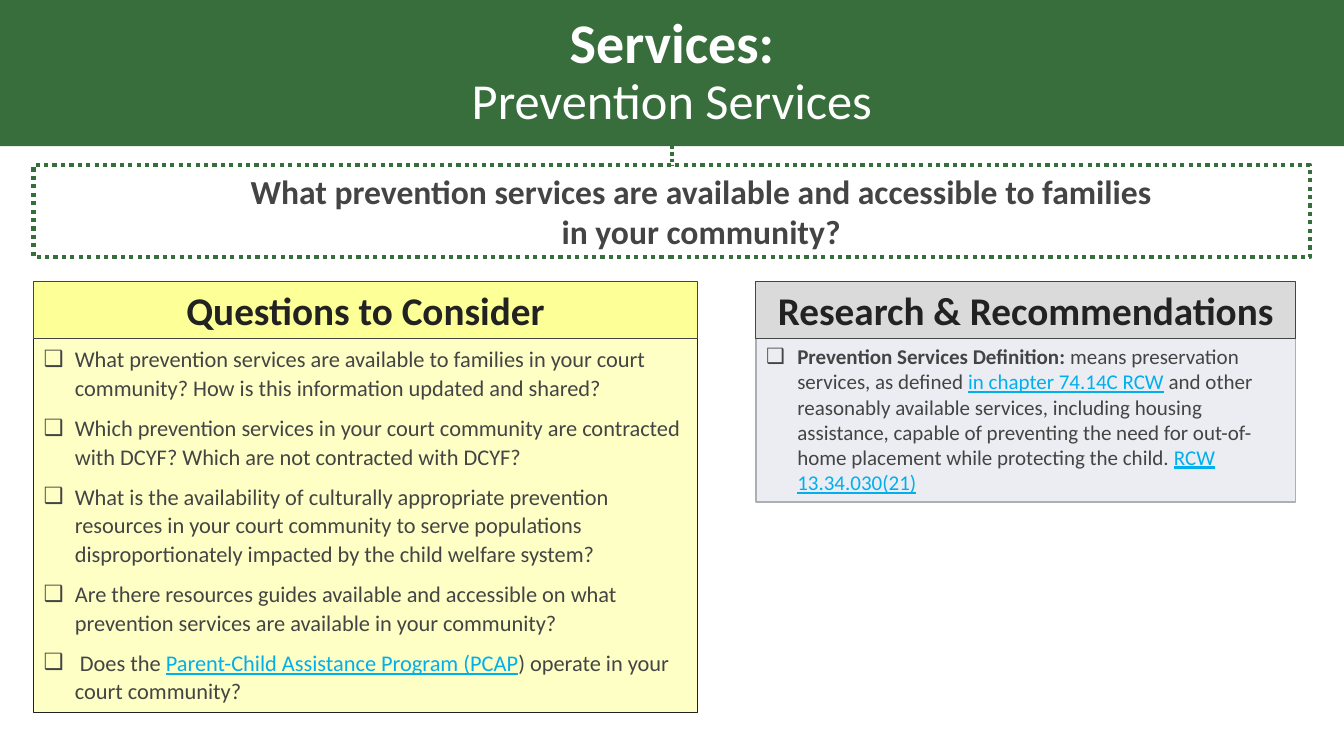
from pptx import Presentation
from pptx.dml.color import RGBColor
from pptx.enum.dml import MSO_LINE
from pptx.enum.shapes import MSO_CONNECTOR, MSO_SHAPE
from pptx.enum.text import MSO_ANCHOR, MSO_AUTO_SIZE, PP_ALIGN
from pptx.oxml.ns import qn
from pptx.util import Inches, Pt

RECT = MSO_SHAPE.RECTANGLE
LINE = MSO_CONNECTOR.STRAIGHT
DOTS = MSO_LINE.ROUND_DOT
TOP, MIDDLE = MSO_ANCHOR.TOP, MSO_ANCHOR.MIDDLE
LEFT, CENTER = PP_ALIGN.LEFT, PP_ALIGN.CENTER
FIXED = MSO_AUTO_SIZE.NONE

GREEN = RGBColor(0x38, 0x6D, 0x3C)
WHITE = RGBColor(0xFF, 0xFF, 0xFF)
INK = RGBColor(0x44, 0x44, 0x44)
BLACK = RGBColor(0x22, 0x22, 0x22)
LINK = RGBColor(0x00, 0xAF, 0xEC)
YELLOW = RGBColor(0xFD, 0xFF, 0x97)
CREAM = RGBColor(0xFE, 0xFF, 0xC5)
GRAY = RGBColor(0xDA, 0xDA, 0xDA)
MIST = RGBColor(0xEB, 0xED, 0xF3)
STEEL = RGBColor(0xAE, 0xAF, 0xB4)

FONT = "Calibri"
WIDTH, HEIGHT = Inches(13.33), Inches(7.5)
COLS = 40
UNIT = WIDTH / COLS  # square grid cell
HEAD_ROWS = 1.71
INDENT = Inches(0.31)

PLAIN, BOLD, URL = "plain", "bold", "url"
QUESTIONS = [
    [("What prevention services are available to families in your court "
      "community? How is this information updated and shared?", PLAIN)],
    [("Which prevention services in your court community are contracted with "
      "DCYF? Which are not contracted with DCYF?", PLAIN)],
    [("What is the availability of culturally appropriate prevention resources "
      "in your court community to serve populations disproportionately "
      "impacted by the child welfare system?", PLAIN)],
    [("Are there resources guides available and accessible on what prevention "
      "services are available in your community?", PLAIN)],
    [(" Does the ", PLAIN),
     ("Parent-Child Assistance Program (PCAP", URL),
     (") operate in your court community?", PLAIN)],
]
RESEARCH = [
    [("Prevention Services Definition: ", BOLD),
     ("means preservation services, as defined ", PLAIN),
     ("in chapter 74.14C RCW", URL),
     (" and other reasonably available services, including housing "
      "assistance, capable of preventing the need for out-of-home placement "
      "while protecting the child. ", PLAIN),
     ("RCW 13.34.030(21)", URL)],
]


def place(shape, box):
    """Move a shape to a (column, row, columns, rows) box."""
    shape.left, shape.top, shape.width, shape.height = (
        round(n * UNIT) for n in box)


def paint(shape, fill, edge=None, weight=0.75):
    if fill is None:
        shape.fill.background()
    else:
        shape.fill.solid()
        shape.fill.fore_color.rgb = fill
    if edge is None:
        shape.line.fill.background()
    else:
        shape.line.color.rgb = edge
        shape.line.width = Pt(weight)


def style(run, size, color, bold=False):
    font = run.font
    font.name, font.size, font.bold = FONT, Pt(size), bold
    font.color.rgb = color


def frame(shape, anchor):
    text = shape.text_frame
    text.word_wrap, text.auto_size = True, FIXED
    text.vertical_anchor = anchor
    return text


def add_rect(slide, box):
    shape = slide.shapes.add_shape(RECT, 0, 0, 0, 0)
    shape.shadow.inherit = False
    place(shape, box)
    return shape


def label(shape, words, size, color):
    text = frame(shape, MIDDLE)
    text.text = words
    para = text.paragraphs[0]
    para.alignment = CENTER
    style(para.runs[0], size, color, True)


def banner(slide, box):
    title = slide.shapes.title
    place(title, box)
    paint(title, GREEN)
    text = frame(title, MIDDLE)
    text.text = "Services:\nPrevention Services"
    for para, size, bold in zip(text.paragraphs, (40, 36), (True, False)):
        para.alignment, para.line_spacing = CENTER, 0.9
        para.space_before = Pt(0)
        style(para.runs[0], size, WHITE, bold)
    return title


def prompt(slide, box, title):
    """Dotted box with the main question, tied to the banner."""
    shape = add_rect(slide, box)
    paint(shape, None, GREEN, 3)
    shape.line.dash_style = DOTS
    label(shape, "What prevention services are available and accessible to "
          "families in your community?", 24, INK)
    shape.text_frame.margin_left = round(6.3 * UNIT)
    shape.text_frame.margin_right = round(4.56 * UNIT)

    tie = slide.shapes.add_connector(LINE, 0, 0, 0, 0)
    tie.begin_connect(title, 2)
    tie.end_connect(shape, 0)
    tie.line.color.rgb, tie.line.width = GREEN, Pt(2.25)
    tie.line.dash_style = DOTS
    props = tie._element.spPr
    props.append(props.makeelement(qn("a:effectLst"), {}))


def bullet(para):
    props = para._p.get_or_add_pPr()
    props.set("marL", str(INDENT))
    props.set("indent", str(-INDENT))
    props.append(props.makeelement(qn("a:buFont"), {"typeface": FONT}))
    props.append(props.makeelement(qn("a:buChar"), {"char": "❑"}))


def fill_list(body, items, size, spacing, after):
    text = frame(body, TOP)
    for i, parts in enumerate(items):
        para = text.add_paragraph() if i else text.paragraphs[0]
        para.alignment, para.line_spacing = LEFT, spacing
        para.space_before, para.space_after = Pt(0), Pt(after)
        bullet(para)
        for words, kind in parts:
            run = para.add_run()
            run.text = words
            style(run, size, LINK if kind == URL else INK, kind == BOLD)
            run.font.underline = kind == URL


def card(slide, body, box, heading, fills, edge, weight):
    """Heading bar above a list; the box covers both."""
    col, row, cols, rows = box
    place(body, (col, row + HEAD_ROWS, cols, rows - HEAD_ROWS))
    paint(body, fills[1], edge, weight)
    head = add_rect(slide, (col, row, cols, HEAD_ROWS))
    paint(head, fills[0], INK)
    label(head, heading, 28, BLACK)


def main():
    deck = Presentation()
    deck.slide_width, deck.slide_height = WIDTH, HEIGHT
    slide = deck.slides.add_slide(deck.slide_layouts[3])
    left, right = slide.placeholders[1], slide.placeholders[2]

    title = banner(slide, (0, 0, COLS, 4.35))
    prompt(slide, (1, 4.92, COLS - 2, 2.73), title)
    card(slide, left, (1, 8.37, 19.75, 12.84), "Questions to Consider",
         (YELLOW, CREAM), BLACK, 0.75)
    fill_list(left, QUESTIONS, 16, 1.07, 8)
    card(slide, right, (22.5, 8.37, 16.05, 6.57), "Research & Recommendations",
         (GRAY, MIST), STEEL, 1)
    fill_list(right, RESEARCH, 15, 1.0, 0)
    deck.save("out.pptx")


if __name__ == "__main__":
    main()
